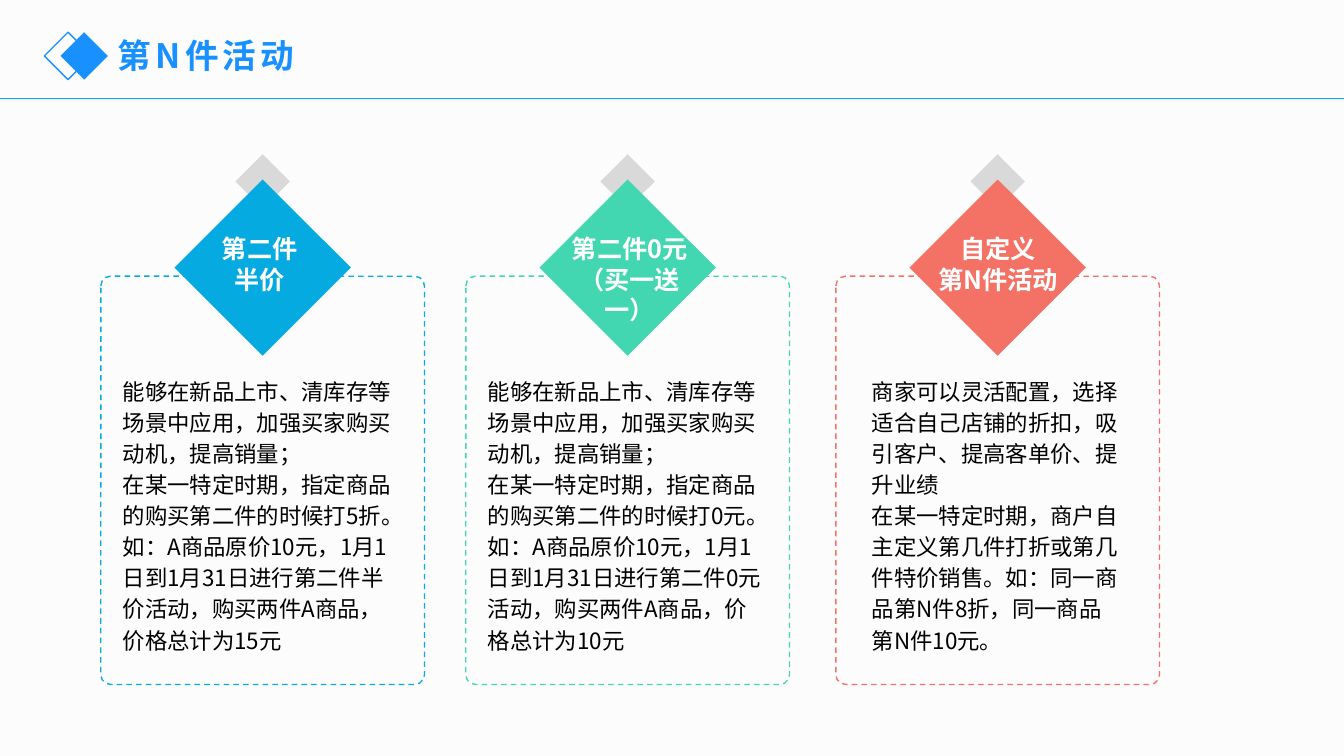
from lxml.etree import SubElement
from pptx import Presentation
from pptx.dml.color import RGBColor
from pptx.enum.dml import MSO_LINE
from pptx.enum.shapes import MSO_CONNECTOR, MSO_SHAPE
from pptx.enum.text import MSO_ANCHOR, MSO_AUTO_SIZE, PP_ALIGN
from pptx.oxml.ns import qn
from pptx.util import Inches, Pt

FONT = "Noto Sans CJK SC"
TITLE_BLUE = "1890FF"
BOX_WIDTH = 3.21

# box left, colour, (badge left, width, lines), (description left, width, paragraphs)
CARDS = [
    (1.0, "05AAE0", (1.97, 1.21, ["第二件", "半价"]), (1.12, 2.95, [
        "能够在新品上市、清库存等场景中应用，加强买家购买动机，提高销量；",
        "在某一特定时期，指定商品的购买第二件的时候打5折。如：A商品原价10元，"
        "1月1日到1月31日进行第二件半价活动，购买两件A商品，价格总计为15元"])),
    (4.62, "42D6B1", (5.4, 1.69, ["第二件0元", "（买一送一）"]), (4.74, 2.97, [
        "能够在新品上市、清库存等场景中应用，加强买家购买动机，提高销量；",
        "在某一特定时期，指定商品的购买第二件的时候打0元。如：A商品原价10元，"
        "1月1日到1月31日进行第二件0元活动，购买两件A商品，价格总计为10元"])),
    (8.29, "F37265", (9.11, 1.58, ["自定义", "第N件活动"]), (8.55, 2.69, [
        "商家可以灵活配置，选择适合自己店铺的折扣，吸引客户、提高客单价、提升业绩",
        "在某一特定时期，商户自主定义第几件打折或第几件特价销售。"
        "如：同一商品第N件8折，同一商品第N件10元。"])),
]


def rgb(color):
    return RGBColor.from_string(color)


def add_shape(slide, kind, left, top, width, height, fill=None, line=None):
    shape = slide.shapes.add_shape(
        kind, Inches(left), Inches(top), Inches(width), Inches(height))
    shape.shadow.inherit = False
    if fill:
        shape.fill.solid()
        shape.fill.fore_color.rgb = rgb(fill)
    else:
        shape.fill.background()
    if line:
        shape.line.color.rgb = rgb(line)
        shape.line.width = Pt(1)
    else:
        shape.line.fill.background()
    return shape


def add_diamond(slide, left, top, size, **colors):
    return add_shape(slide, MSO_SHAPE.DIAMOND, left, top, size, size, **colors)


def write_text(shape, lines, size, color, bold=False, align=PP_ALIGN.LEFT, spacing=None):
    frame = shape.text_frame
    frame.word_wrap = True
    frame.auto_size = MSO_AUTO_SIZE.SHAPE_TO_FIT_TEXT
    frame.vertical_anchor = MSO_ANCHOR.TOP
    frame.text = "\n".join(lines)
    for paragraph in frame.paragraphs:
        paragraph.alignment = align
        if spacing:
            paragraph.line_spacing = Pt(spacing)
        font = paragraph.font
        font.size = Pt(size)
        font.bold = bold
        font.name = FONT
        font.color.rgb = rgb(color)
        SubElement(font._element, qn("a:ea"), typeface=FONT)


def add_text(slide, left, top, width, height, lines, **style):
    box = slide.shapes.add_textbox(
        Inches(left), Inches(top), Inches(width), Inches(height))
    write_text(box, lines, **style)


def add_header(slide, text):
    rule = slide.shapes.add_connector(
        MSO_CONNECTOR.STRAIGHT, 0, Inches(0.98), Inches(13.33), Inches(0.98))
    rule.line.color.rgb = rgb("00ADFF")
    rule.line.width = Pt(1)
    SubElement(rule._element.spPr, qn("a:effectLst"))
    add_diamond(slide, 0.44, 0.32, 0.47, line=TITLE_BLUE)
    add_diamond(slide, 0.6, 0.32, 0.47, fill=TITLE_BLUE)

    title = slide.shapes.title
    title.left, title.top = Inches(1.07), Inches(0.3)
    title.width, title.height = Inches(5.49), Inches(0.5)
    write_text(title, [text], size=24, color=TITLE_BLUE, bold=True)
    title.text_frame.paragraphs[0].font._element.set("spc", "300")


def add_card(slide, left, color, badge, description):
    center = left + BOX_WIDTH / 2
    for size, top, fill in ((0.54, 1.53, "D9D9D9"), (1.75, 1.78, color)):
        add_diamond(slide, center - size / 2, top, size, fill=fill)
    box = add_shape(slide, MSO_SHAPE.ROUNDED_RECTANGLE, left, 2.74, BOX_WIDTH, 4.05,
                    line=color)
    box.adjustments[0] = 0.03
    box.line.dash_style = MSO_LINE.DASH

    badge_left, badge_width, badge_lines = badge
    add_text(slide, badge_left, 2.27, badge_width, 0.71, badge_lines,
             size=18, color="FFFFFF", bold=True, align=PP_ALIGN.CENTER)
    text_left, text_width, paragraphs = description
    add_text(slide, text_left, 3.66, text_width, 2.84, paragraphs,
             size=16, color="000000", spacing=22.2)


def main():
    presentation = Presentation()
    presentation.slide_width = Inches(13.33)
    presentation.slide_height = Inches(7.5)
    slide = presentation.slides.add_slide(presentation.slide_layouts.get_by_name("Title Only"))
    slide.background.fill.solid()
    slide.background.fill.fore_color.rgb = rgb("FCFCFC")
    add_header(slide, "第N件活动")
    for card in CARDS:
        add_card(slide, *card)
    presentation.save("out.pptx")


if __name__ == "__main__":
    main()
